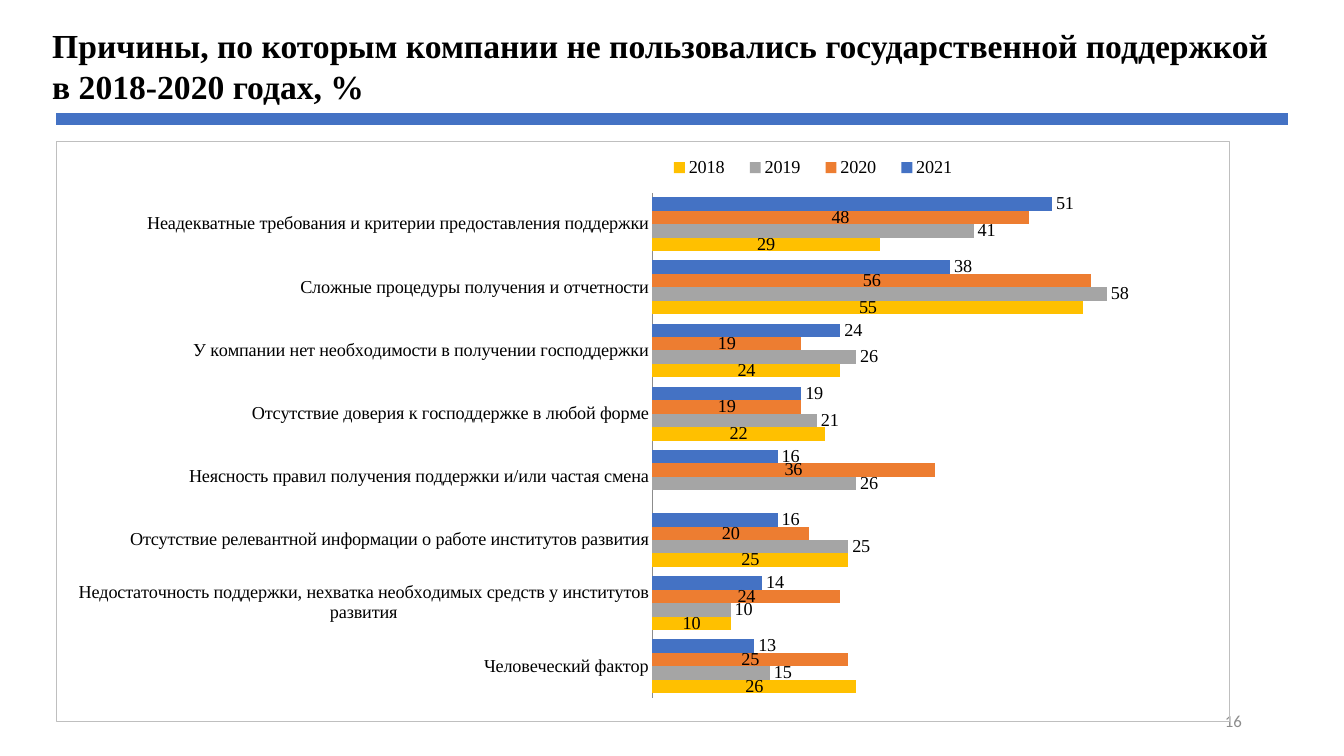
from lxml.etree import SubElement
from pptx import Presentation
from pptx.chart.data import CategoryChartData
from pptx.dml.color import RGBColor
from pptx.enum.chart import XL_CHART_TYPE, XL_LABEL_POSITION, XL_LEGEND_POSITION, XL_TICK_MARK
from pptx.enum.shapes import MSO_CONNECTOR
from pptx.enum.text import MSO_ANCHOR, PP_ALIGN
from pptx.oxml import parse_xml
from pptx.oxml.ns import nsdecls, qn
from pptx.util import Pt

BLACK = RGBColor(0x00, 0x00, 0x00)
BLUE = RGBColor(0x44, 0x72, 0xC4)
ORANGE = RGBColor(0xED, 0x7D, 0x31)
GRAY = RGBColor(0xA5, 0xA5, 0xA5)
YELLOW = RGBColor(0xFF, 0xC0, 0x00)
AXIS_GRAY = RGBColor(0x8C, 0x8C, 0x8C)
BORDER_GRAY = RGBColor(0xBF, 0xBF, 0xBF)
SERIF = "Times New Roman"

REASONS = [
    "Неадекватные требования и критерии предоставления поддержки",
    "Сложные процедуры получения и отчетности",
    "У компании нет необходимости в получении господдержки",
    "Отсутствие доверия к господдержке в любой форме",
    "Неясность правил получения поддержки и/или частая смена",
    "Отсутствие релевантной информации о работе институтов развития",
    "Недостаточность поддержки, нехватка необходимых средств у институтов развития",
    "Человеческий фактор",
]
OUTSIDE, CENTER = XL_LABEL_POSITION.OUTSIDE_END, XL_LABEL_POSITION.CENTER
YEARS = [
    ("2021", [51, 38, 24, 19, 16, 16, 14, 13], BLUE, OUTSIDE),
    ("2020", [48, 56, 19, 19, 36, 20, 24, 25], ORANGE, CENTER),
    ("2019", [41, 58, 26, 21, 26, 25, 10, 15], GRAY, OUTSIDE),
    ("2018", [29, 55, 24, 22, None, 25, 10, 26], YELLOW, CENTER),
]

prs = Presentation()
prs.slide_width, prs.slide_height = Pt(960), Pt(540)
s = prs.slides.add_slide(prs.slide_layouts[6])


def add_text(text, x, y, w, h, size, font, color, bold=False,
             align=PP_ALIGN.LEFT, anchor=MSO_ANCHOR.TOP):
    tf = s.shapes.add_textbox(Pt(x), Pt(y), Pt(w), Pt(h)).text_frame
    tf.word_wrap = True
    tf.vertical_anchor = anchor
    p = tf.paragraphs[0]
    p.alignment = align
    r = p.add_run()
    r.text = text
    r.font.size, r.font.name, r.font.bold = Pt(size), font, bold
    r.font.color.rgb = color


def place(element, index, x, y, w, h, inner=False):
    """Give a chart part a fixed place, in fractions of the chart area."""
    for old in element.findall(qn("c:layout")):
        element.remove(old)
    layout = parse_xml(f"<c:layout {nsdecls('c')}><c:manualLayout/></c:layout>")
    settings = [("layoutTarget", "inner")] if inner else []
    settings += [("xMode", "edge"), ("yMode", "edge"), ("x", x), ("y", y), ("w", w), ("h", h)]
    for tag, value in settings:
        SubElement(layout[0], qn(f"c:{tag}")).set("val", str(value))
    element.insert(index, layout)


add_text("16", 678.24, 500.4, 216, 28.8, 12, "Calibri", AXIS_GRAY,
         align=PP_ALIGN.RIGHT, anchor=MSO_ANCHOR.MIDDLE)

# Chart
data = CategoryChartData()
data.categories = REASONS
for year, values, _, _ in YEARS:
    data.add_series(year, values)
chart = s.shapes.add_chart(XL_CHART_TYPE.BAR_CLUSTERED, Pt(40.32), Pt(100.8),
                           Pt(838.08), Pt(414.72), data).chart
chart.has_title = False
chart.font.size, chart.font.name = Pt(13), SERIF
chart.font.color.rgb = BLACK

plot = chart.plots[0]
plot.gap_width, plot.overlap = 70, 0
plot.vary_by_categories = False
for series, (_, _, color, position) in zip(plot.series, YEARS):
    series.format.fill.solid()
    series.format.fill.fore_color.rgb = color
    series.invert_if_negative = False
    labels = series.data_labels
    labels.show_value = True
    labels.position = position
    labels.number_format, labels.number_format_is_linked = "0", False

reasons_axis = chart.category_axis
reasons_axis.reverse_order = True
reasons_axis.major_tick_mark = XL_TICK_MARK.NONE
reasons_axis.format.line.color.rgb = AXIS_GRAY
reasons_axis.format.line.width = Pt(0.75)
percent_axis = chart.value_axis
percent_axis.minimum_scale, percent_axis.maximum_scale = 0, 70
percent_axis.has_major_gridlines = False
percent_axis.visible = False

chart.has_legend = True
chart.legend.position = XL_LEGEND_POSITION.TOP
chart.legend.include_in_layout = False

chart_xml = chart.element.find(qn("c:chart"))
place(chart_xml.find(qn("c:plotArea")), 0, 0.508, 0.088, 0.468, 0.872, inner=True)
place(chart_xml.find(qn("c:legend")), 1, 0.51, 0.02, 0.27, 0.05)
chart_xml.addnext(parse_xml(
    f'<c:spPr {nsdecls("c", "a")}><a:noFill/><a:ln w="{Pt(0.75)}"><a:solidFill>'
    f'<a:srgbClr val="{BORDER_GRAY}"/></a:solidFill></a:ln></c:spPr>'))

# Title and rule
add_text("Причины, по которым компании не пользовались государственной поддержкой "
         "в 2018-2020 годах, %", 30.24, 14.4, 889.92, 65.5, 24, SERIF, BLACK, bold=True)
rule = s.shapes.add_connector(MSO_CONNECTOR.STRAIGHT, Pt(40.32), Pt(85), Pt(920.16), Pt(85))
rule.line.color.rgb = BLUE
rule.line.width = Pt(8)
SubElement(rule.element.spPr, qn("a:effectLst"))

prs.save("out.pptx")
